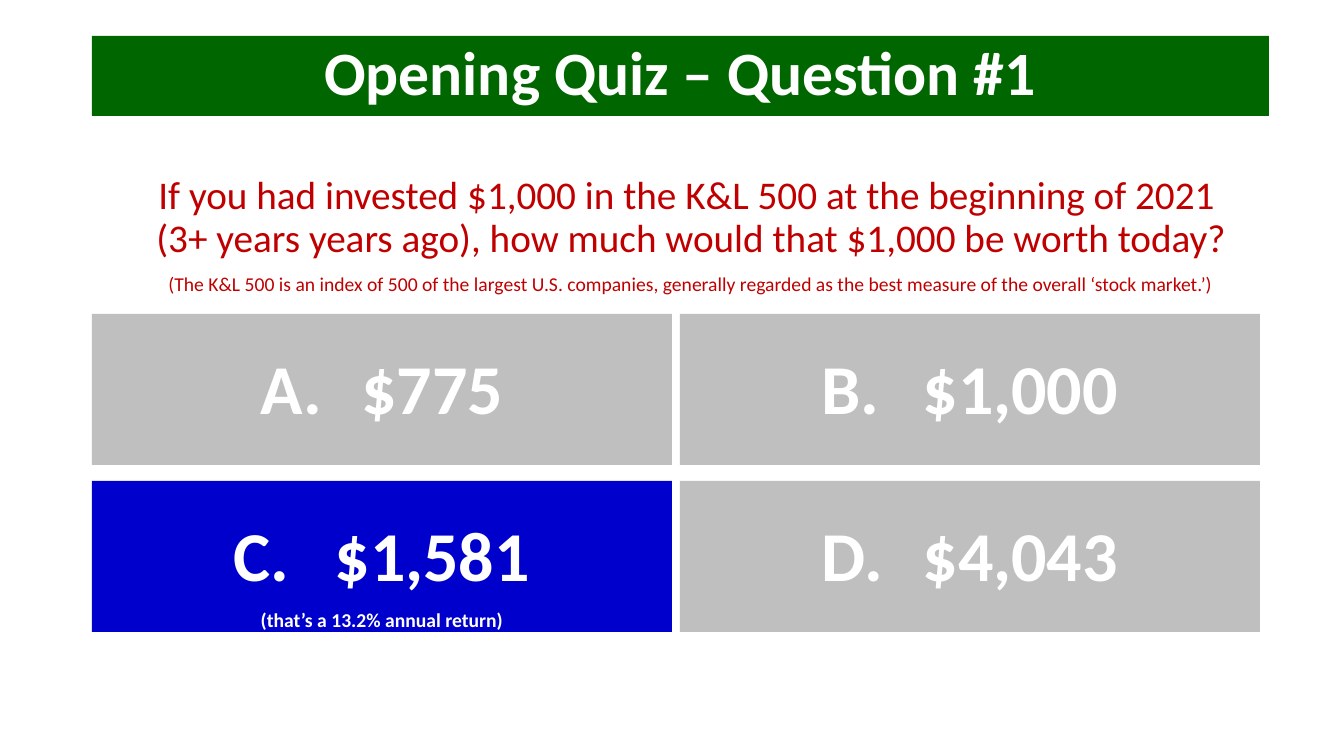
from lxml import etree
from pptx import Presentation
from pptx.dml.color import RGBColor
from pptx.enum.shapes import MSO_SHAPE
from pptx.enum.text import MSO_ANCHOR, PP_ALIGN
from pptx.oxml.ns import qn
from pptx.util import Emu, Pt

RECT = MSO_SHAPE.RECTANGLE
TOP, MIDDLE = MSO_ANCHOR.TOP, MSO_ANCHOR.MIDDLE
CENTER = PP_ALIGN.CENTER
EMU_PER_PX = 914400 / 100.8
FONT = "Calibri"
COLORS = {
    "title": "006600",
    "answer": "BFBFBF",
    "correct": "0000CC",
    "question": "C00000",
    "white": "FFFFFF",
}


def px(n):
    return Emu(round(n * EMU_PER_PX))


class QuizSlide:
    """Draws quiz elements in one style on one slide."""

    def __init__(self, prs):
        self.shapes = prs.slides.add_slide(prs.slide_layouts[6]).shapes

    def fill_text(self, sp, lines, color, bold, anchor, top=5):
        tf = sp.text_frame
        tf.word_wrap = True
        tf.vertical_anchor = anchor
        tf.margin_left = tf.margin_right = px(10)
        tf.margin_top, tf.margin_bottom = px(top), px(5)
        for i, (text, size) in enumerate(lines):
            p = tf.add_paragraph() if i else tf.paragraphs[0]
            p.text = text
            p.alignment = CENTER
            p.line_spacing = 0.9
            if i:
                p.space_before = Pt(10)
            if "\t" in text:
                tabs = etree.SubElement(p._p.get_or_add_pPr(), qn("a:tabLst"))
                etree.SubElement(tabs, qn("a:tab"), pos="914400", algn="l")
            for r in p.runs:
                r.font.name = FONT
                r.font.size = Pt(size)
                r.font.bold = bold
                r.font.color.rgb = RGBColor.from_string(COLORS[color])

    def panel(self, x, y, w, h, fill, lines, anchor=TOP, top=5):
        sp = self.shapes.add_shape(RECT, px(x), px(y), px(w), px(h))
        sp.shadow.inherit = False
        sp.fill.solid()
        sp.fill.fore_color.rgb = RGBColor.from_string(COLORS[fill])
        sp.line.fill.background()
        self.fill_text(sp, lines, "white", True, anchor, top)

    def text(self, x, y, w, h, lines, color):
        sp = self.shapes.add_textbox(px(x), px(y), px(w), px(h))
        self.fill_text(sp, lines, color, False, TOP)


def main():
    prs = Presentation()
    prs.slide_width, prs.slide_height = px(1344), px(756)
    slide = QuizSlide(prs)

    slide.panel(92, 36, 1177, 80, "title",
                [("Opening Quiz – Question #1", 44)], MIDDLE)
    slide.text(92, 171, 1198, 140, [
        ("If you had invested $1,000 in the K&L 500 at the beginning of 2021 \v"
         "(3+ years years ago), how much would that $1,000 be worth today?", 28),
        ("(The K&L 500 is an index of 500 of the largest U.S. companies, "
         "generally regarded as the best measure of the overall "
         "‘stock market.’)", 14),
    ], "question")

    answers = ["$775", "$1,000", "$1,581", "$4,043"]
    correct = 2
    for i, amount in enumerate(answers):
        row, col = divmod(i, 2)
        lines = [(f"{'ABCD'[i]}.\t{amount}", 50)]
        if i == correct:
            lines.append(("(that’s a 13.2% annual return)", 14))
        slide.panel(92 + col * 588, 314 + row * 167, 580, 151,
                    "correct" if i == correct else "answer", lines, top=40)

    prs.save("out.pptx")


if __name__ == "__main__":
    main()
